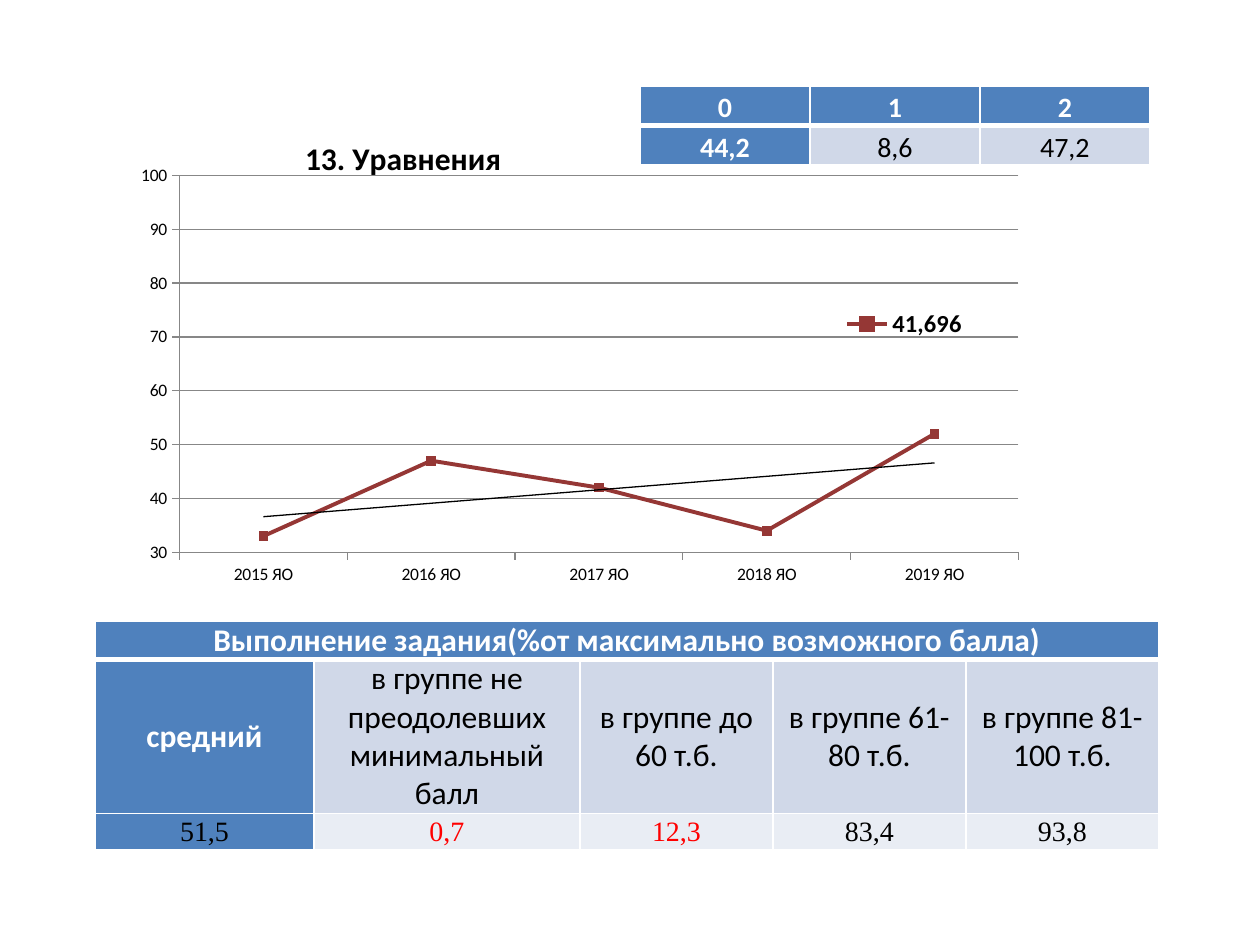
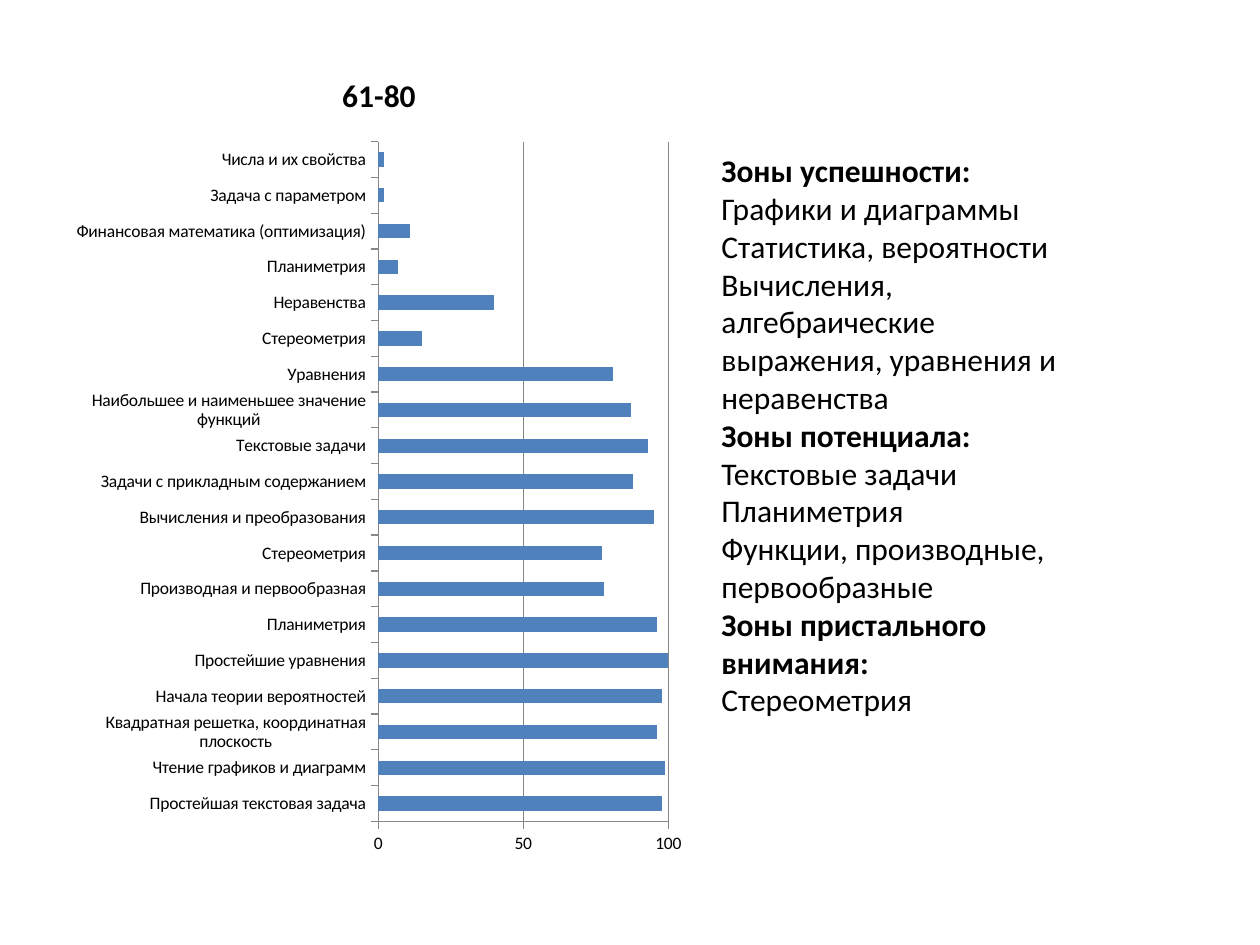
from lxml import etree
from pptx import Presentation
from pptx.chart.data import CategoryChartData as ChartData
from pptx.dml.color import RGBColor
from pptx.enum.chart import XL_CHART_TYPE as ChartKind, XL_LEGEND_POSITION as LegendSide
from pptx.enum.chart import XL_MARKER_STYLE as MarkerStyle, XL_TICK_MARK as Tick
from pptx.enum.text import MSO_ANCHOR as Anchor, MSO_AUTO_SIZE as AutoSize, PP_ALIGN as Align
from pptx.oxml import parse_xml
from pptx.oxml.ns import nsdecls, qn
from pptx.util import Emu, Pt

WHITE, BLACK, RED = "FFFFFF", "000000", "FF0000"
BLUE, PALE, PALEST = "4F81BD", "D0D8E8", "E9EDF4"
MAROON, GREY = "953735", "878787"
SANS, SERIF = "Calibri", "Times New Roman"

SCORE_SHARES = [["0", "1", "2"], ["44,2", "8,6", "47,2"]]
GROUP_RESULTS = [
    ["Выполнение задания(%от максимально возможного балла)", "", "", "", ""],
    ["средний", "в группе не преодолевших минимальный балл", "в группе до 60 т.б.",
     "в группе 61-80 т.б.", "в группе 81-100 т.б."],
    ["51,5", "0,7", "12,3", "83,4", "93,8"],
]
WEAK_RESULTS = {"0,7", "12,3"}
YEARLY = [("2015 ЯО", 33), ("2016 ЯО", 47), ("2017 ЯО", 42), ("2018 ЯО", 34), ("2019 ЯО", 52)]
TOPICS = [
    ("Простейшая текстовая задача", 98),
    ("Чтение графиков и диаграмм", 99),
    ("Квадратная решетка, координатная плоскость", 96),
    ("Начала теории вероятностей", 98),
    ("Простейшие уравнения", 100),
    ("Планиметрия", 96),
    ("Производная и первообразная", 78),
    ("Стереометрия", 77),
    ("Вычисления и преобразования", 95),
    ("Задачи с прикладным содержанием", 88),
    ("Текстовые задачи", 93),
    ("Наибольшее и наименьшее значение функций", 87),
    ("Уравнения", 81),
    ("Стереометрия", 15),
    ("Неравенства", 40),
    ("Планиметрия", 7),
    ("Финансовая математика (оптимизация)", 11),
    ("Задача с параметром", 2),
    ("Числа и их свойства", 2),
]
ZONES = {
    "Зоны успешности:": ["Графики и диаграммы", "Статистика, вероятности",
                         "Вычисления, алгебраические выражения, уравнения и неравенства"],
    "Зоны потенциала:": ["Текстовые задачи", "Планиметрия",
                         "Функции, производные, первообразные"],
    "Зоны пристального внимания:": ["Стереометрия"],
}


def px(length):
    return Emu(round(length * 914400 / 126))


def color(code):
    return RGBColor.from_string(code)


def style_font(font, size=18, name=SANS, ink=BLACK, bold=False):
    font.size, font.name, font.bold = Pt(size), name, bold
    font.color.rgb = color(ink)


def write(para, text, align=None, spacing=None, **style):
    para.alignment = align
    para.line_spacing = spacing
    span = para.add_run()
    span.text = text
    style_font(span.font, **style)


def set_borders(cell, top, bottom):
    properties = cell._tc.get_or_add_tcPr()
    for side, points in (("L", 1), ("R", 1), ("T", top), ("B", bottom)):
        properties.append(parse_xml(
            f'<a:ln{side} {nsdecls("a")} w="{Pt(points)}"><a:solidFill>'
            f'<a:srgbClr val="{WHITE}"/></a:solidFill></a:ln{side}>'))


def add_grid(page, rows, left, top, widths, heights, size, spacing=None):
    table = page.shapes.add_table(len(rows), len(widths), px(left), px(top),
                                  px(sum(widths)), px(sum(heights))).table
    for column, width in zip(table.columns, widths):
        column.width = px(width)
    for line, height in zip(table.rows, heights):
        line.height = px(height)
    for r, texts in enumerate(rows):
        for c, text in enumerate(texts):
            cell = table.cell(r, c)
            strong = r == 0 or c == 0
            measured = r == 2
            side = 1 if measured else 9
            cell.margin_left = cell.margin_right = px(side)
            cell.margin_top, cell.margin_bottom = px(1 if measured else 0), 0
            cell.vertical_anchor = Anchor.MIDDLE
            set_borders(cell, 3 if r == 1 else 1, 3 if r == 0 else 1)
            cell.fill.solid()
            cell.fill.fore_color.rgb = color(BLUE if strong else PALEST if measured else PALE)
            if not text:
                continue
            if measured:
                style = dict(size=16, name=SERIF, ink=RED if text in WEAK_RESULTS else BLACK)
            else:
                style = dict(size=size, ink=WHITE if strong else BLACK, bold=strong)
            write(cell.text_frame.paragraphs[0], text, Align.CENTER, spacing, **style)
    return table


def manual_layout(x, y, w=None, h=None, inner=False):
    layout = etree.Element(qn("c:layout"))
    manual = etree.SubElement(layout, qn("c:manualLayout"))
    parts = [("layoutTarget", "inner")] if inner else []
    parts += [("xMode", "edge"), ("yMode", "edge"), ("x", x), ("y", y), ("w", w), ("h", h)]
    for tag, value in parts:
        if value is not None:
            etree.SubElement(manual, qn(f"c:{tag}")).set("val", str(value))
    return layout


def place(part, layout, after=None):
    for old in part.findall(qn("c:layout")):
        part.remove(old)
    if after is None:
        part.insert(0, layout)
    else:
        part.find(qn(after)).addnext(layout)


def add_graph(page, kind, title, series_name, points, area, maximum):
    data = ChartData()
    data.categories = [label for label, value in points]
    data.add_series(series_name, [value for label, value in points])
    chart = page.shapes.add_chart(kind, *map(px, area), data).chart
    style_font(chart.font, size=10)
    chart.has_legend = False
    chart.has_title = True
    write(chart.chart_title.text_frame.paragraphs[0], title, bold=True)
    chart.plots[0].vary_by_categories = False
    values = chart.value_axis
    values.maximum_scale = maximum
    values.has_major_gridlines = True
    for line in (values.major_gridlines.format.line, values.format.line,
                 chart.category_axis.format.line):
        line.color.rgb = color(GREY)
        line.width = Pt(0.75)
    for axis in (values, chart.category_axis):
        axis.major_tick_mark = Tick.OUTSIDE
        axis.minor_tick_mark = Tick.NONE
    return chart


def add_trend(chart):
    chart.element.xpath("//c:ser/c:cat")[0].addprevious(parse_xml(
        f'<c:trendline {nsdecls("c", "a")}><c:spPr><a:ln w="{Pt(0.75)}"><a:solidFill>'
        f'<a:srgbClr val="{BLACK}"/></a:solidFill></a:ln></c:spPr>'
        '<c:trendlineType val="linear"/><c:dispRSqr val="0"/><c:dispEq val="0"/></c:trendline>'))
    chart.element.xpath("//c:legend/c:legendPos")[0].addnext(parse_xml(
        f'<c:legendEntry {nsdecls("c")}><c:idx val="1"/><c:delete val="1"/></c:legendEntry>'))


def build_equations(page):
    table = add_grid(page, GROUP_RESULTS, 95, 621, [219, 266, 193, 193, 193], [38, 151, 36], 18)
    table.cell(0, 0).merge(table.cell(0, 4))

    chart = add_graph(page, ChartKind.LINE_MARKERS, "13. Уравнения", "41,696", YEARLY,
                      (115, 106, 922, 496), 100)
    chart.value_axis.minimum_scale = 30
    series = chart.plots[0].series[0]
    series.smooth = False
    series.format.line.color.rgb = color(MAROON)
    series.format.line.width = Pt(2.25)
    marker = series.marker
    marker.style, marker.size = MarkerStyle.SQUARE, 5
    marker.format.fill.solid()
    marker.format.fill.fore_color.rgb = color(MAROON)
    marker.format.line.color.rgb = color(MAROON)
    marker.format.line.width = Pt(0.75)
    chart.has_legend = True
    chart.legend.position = LegendSide.RIGHT
    chart.legend.include_in_layout = True
    style_font(chart.legend.font, size=14, bold=True)
    add_trend(chart)
    root = chart.element
    place(root.xpath("//c:plotArea")[0], manual_layout(0.07, 0.14, 0.91, 0.76, inner=True))
    place(root.xpath("//c:chart/c:title")[0], manual_layout(0.2, 0.05), "c:tx")
    place(root.xpath("//c:legend")[0], manual_layout(0.79, 0.4, 0.15, 0.08), "c:legendEntry")

    add_grid(page, SCORE_SHARES, 640, 86, [170] * 3, [38] * 2, 16, 1.15)


def build_topics(page):
    chart = add_graph(page, ChartKind.BAR_CLUSTERED, "61-80", "61-80", TOPICS,
                      (64, 45, 630, 825), 100)
    chart.value_axis.major_unit = 50
    chart.plots[0].gap_width = 150
    fill = chart.plots[0].series[0].format.fill
    fill.solid()
    fill.fore_color.rgb = color(BLUE)

    frame = page.shapes.add_textbox(*map(px, (709, 145, 397, 585))).text_frame
    frame.word_wrap = True
    frame.auto_size = AutoSize.SHAPE_TO_FIT_TEXT
    lines = [(text, text == zone) for zone, topics in ZONES.items() for text in [zone, *topics]]
    for number, (text, bold) in enumerate(lines):
        para = frame.add_paragraph() if number else frame.paragraphs[0]
        write(para, text, bold=bold)


def main():
    deck = Presentation()
    deck.slide_width, deck.slide_height = px(1260), px(945)
    for build in (build_equations, build_topics):
        build(deck.slides.add_slide(deck.slide_layouts[6]))
    deck.save("out.pptx")


if __name__ == "__main__":
    main()
